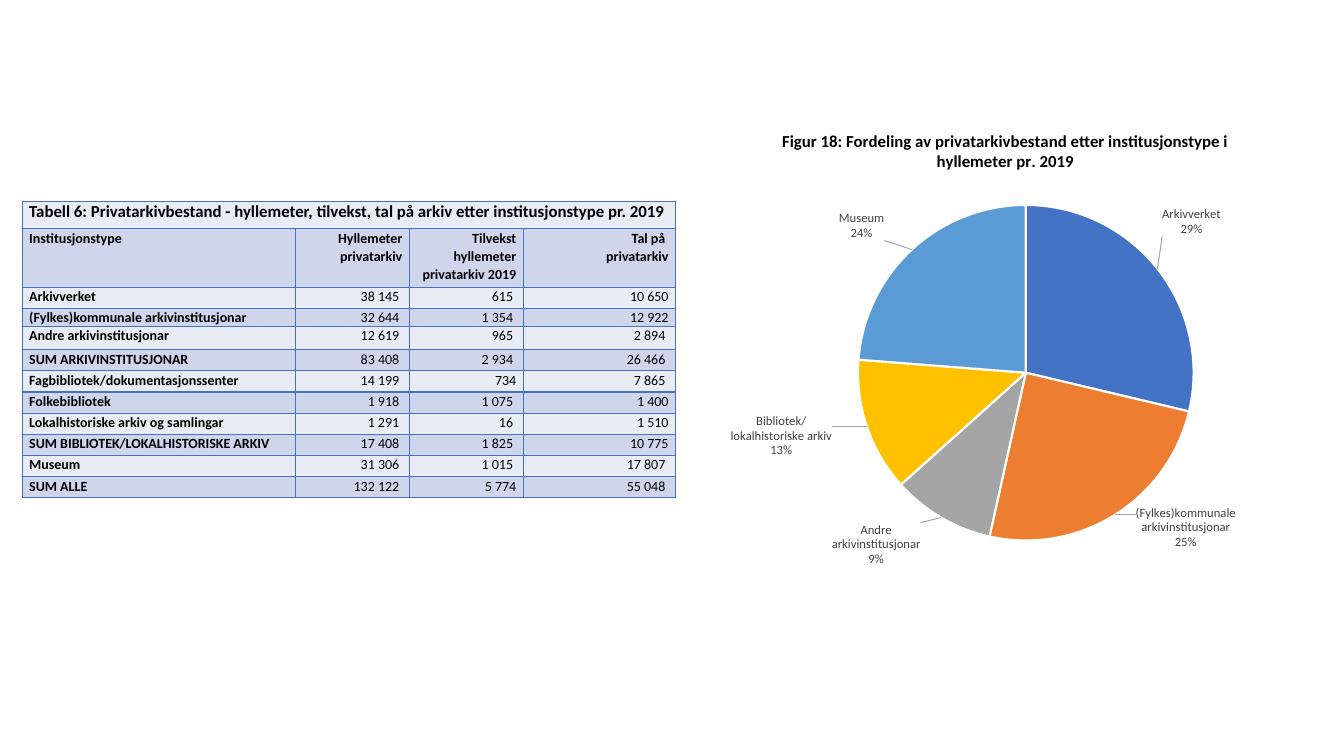
from dataclasses import dataclass

from pptx import Presentation
from pptx.chart.data import CategoryChartData
from pptx.dml.color import RGBColor
from pptx.enum.chart import XL_CHART_TYPE
from pptx.enum.text import PP_ALIGN
from pptx.oxml import parse_xml
from pptx.util import Inches, Pt

PIE = XL_CHART_TYPE.PIE
LEFT = PP_ALIGN.LEFT
RIGHT = PP_ALIGN.RIGHT
NS = (
    'xmlns:c="http://schemas.openxmlformats.org/drawingml/2006/chart" '
    'xmlns:a="http://schemas.openxmlformats.org/drawingml/2006/main"'
)


@dataclass(frozen=True)
class Theme:
    font: str = "Calibri"
    ink: str = "000000"
    label: str = "404040"
    leader: str = "A6A6A6"
    white: str = "FFFFFF"
    line: str = "4472C4"
    bands: tuple = ("E9EBF5", "CFD5EA")
    slices: tuple = ("4472C4", "ED7D31", "A5A5A5", "FFC000", "5B9BD5")
    title: int = 12
    body: int = 10
    small: int = 9


HEAD = [
    "Institusjonstype",
    "Hyllemeter privatarkiv",
    "Tilvekst hyllemeter privatarkiv 2019",
    "Tal på \nprivatarkiv",
]
ROWS = [
    ["Arkivverket", "38 145 ", "615 ", "10 650"],
    ["(Fylkes)kommunale arkivinstitusjonar", "32 644 ", "1 354 ", "12 922"],
    ["Andre arkivinstitusjonar", "12 619 ", "965 ", "2 894 "],
    ["SUM ARKIVINSTITUSJONAR", "83 408 ", "2 934 ", "26 466 "],
    ["Fagbibliotek/dokumentasjonssenter", "14 199 ", "734", "7 865 "],
    ["Folkebibliotek", "1 918 ", "1 075 ", "1 400"],
    ["Lokalhistoriske arkiv og samlingar", "1 291 ", "16 ", "1 510"],
    ["SUM BIBLIOTEK/LOKALHISTORISKE ARKIV", "17 408 ", "1 825 ", "10 775"],
    ["Museum", "31 306 ", "1 015 ", "17 807 "],
    ["SUM ALLE", "132 122 ", "5 774", "55 048 "],
]
WIDTHS = [2.71, 1.13, 1.13, 1.51]
HEIGHTS = [0.27, 0.58, 0.21, 0.18, 0.23] + [0.21] * 7
SHARES = {
    "Arkivverket": 29,
    "(Fylkes)kommunale arkivinstitusjonar": 25,
    "Andre arkivinstitusjonar": 10,
    "Bibliotek/lokalhistoriske arkiv": 13,
    "Museum": 24,
}
SHIFTS = [(0, -0.06), (0.03, -0.03), (-0.03, 0), (-0.05, -0.03), (-0.04, -0.01)]
FIXED = {2: ["Andre arkivinstitusjonar", "9%"]}


def apply(target, values):
    for name, value in values.items():
        setattr(target, name, value)


class Page:
    def __init__(self, slide, theme):
        self.slide = slide
        self.theme = theme

    def style(self, font, size, bold=False, color=None):
        apply(font, {"name": self.theme.font, "size": Pt(size), "bold": bold})
        font.color.rgb = RGBColor.from_string(color or self.theme.ink)

    def border(self, cell):
        props = cell._tc.get_or_add_tcPr()
        for place, side in enumerate("LRTB"):
            props.insert(place, parse_xml(
                f'<a:ln{side} {NS} w="12700"><a:solidFill>'
                f'<a:srgbClr val="{self.theme.line}"/></a:solidFill></a:ln{side}>'
            ))

    def cell(self, cell, text, band, size, bold, align, space):
        apply(cell, {
            "text": text,
            "margin_left": Inches(0.07), "margin_right": Inches(0.07),
            "margin_top": 0, "margin_bottom": 0,
        })
        cell.fill.solid()
        cell.fill.fore_color.rgb = RGBColor.from_string(self.theme.bands[band])
        self.border(cell)
        for para in cell.text_frame.paragraphs:
            apply(para, {"alignment": align, "line_spacing": space})
            self.style(para.font, size, bold)
            for run in para.runs:
                self.style(run.font, size, bold)

    def table(self, box, title, rows, widths, heights):
        grid = self.slide.shapes.add_table(
            len(heights), len(widths), *map(Inches, box)
        ).table
        apply(grid, {"first_row": False, "horz_banding": False})
        for col, width in zip(grid.columns, widths):
            col.width = Inches(width)
        for row, height in zip(grid.rows, heights):
            row.height = Inches(height)
        for c in range(len(widths)):
            self.cell(grid.cell(0, c), "" if c else title, 0,
                      self.theme.title, True, LEFT, 1.0)
        grid.cell(0, 0).merge(grid.cell(0, len(widths) - 1))
        for r, row in enumerate(rows, 1):
            for c, text in enumerate(row):
                self.cell(grid.cell(r, c), text, r % 2, self.theme.body,
                          r == 1 or c == 0, RIGHT if c else LEFT, 1.07)

    def labels(self, shifts, fixed):
        theme = self.theme
        props = (
            f'sz="{theme.small * 100}" b="0"><a:solidFill><a:srgbClr '
            f'val="{theme.label}"/></a:solidFill><a:latin typeface="{theme.font}"/>'
        )
        shows = (
            '<c:dLblPos val="outEnd"/><c:showLegendKey val="0"/><c:showVal val="0"/>'
            '<c:showCatName val="1"/><c:showSerName val="0"/><c:showPercent val="1"/>'
            '<c:showBubbleSize val="0"/><c:separator>\n</c:separator>'
        )
        look = (
            '<c:numFmt formatCode="0%" sourceLinked="0"/><c:spPr><a:noFill/></c:spPr>'
            f'<c:txPr><a:bodyPr/><a:p><a:pPr><a:defRPr {props}</a:defRPr>'
            '</a:pPr></a:p></c:txPr>'
        )
        items = ""
        for i, (x, y) in enumerate(shifts):
            lines = "".join(
                f"<a:p><a:r><a:rPr {props}</a:rPr><a:t>{line}</a:t></a:r></a:p>"
                for line in fixed.get(i, [])
            )
            rich = f"<c:tx><c:rich><a:bodyPr/>{lines}</c:rich></c:tx>" if lines else ""
            items += (
                f'<c:dLbl><c:idx val="{i}"/><c:layout><c:manualLayout>'
                f'<c:x val="{x}"/><c:y val="{y}"/></c:manualLayout></c:layout>'
                f"{rich}{look}{shows}</c:dLbl>"
            )
        return parse_xml(
            f'<c:dLbls {NS}>{items}{look}{shows}<c:showLeaderLines val="1"/>'
            '<c:leaderLines><c:spPr><a:ln w="9525"><a:solidFill>'
            f'<a:srgbClr val="{theme.leader}"/></a:solidFill></a:ln></c:spPr>'
            "</c:leaderLines></c:dLbls>"
        )

    def pie(self, box, title, shares, plot, shifts, fixed):
        data = CategoryChartData()
        data.categories = list(shares)
        data.add_series("Series 1", list(shares.values()))
        chart = self.slide.shapes.add_chart(PIE, *map(Inches, box), data).chart
        apply(chart, {"has_legend": False, "has_title": True})
        self.style(chart.font, self.theme.body)
        frame = chart.chart_title.text_frame
        frame.text = title
        self.style(frame.paragraphs[0].runs[0].font, self.theme.title, True)
        chart.plots[0].vary_by_categories = True
        series = chart.plots[0].series[0]
        for i, color in enumerate(self.theme.slices):
            form = series.points[i].format
            form.fill.solid()
            form.fill.fore_color.rgb = RGBColor.from_string(color)
            form.line.color.rgb = RGBColor.from_string(self.theme.white)
            form.line.width = Pt(1.5)
        series._element.find("{*}cat").addprevious(self.labels(shifts, fixed))
        area = chart._chartSpace.chart.plotArea
        for old in area.findall("{*}layout"):
            area.remove(old)
        sides = "".join(f'<c:{k} val="{v}"/>' for k, v in plot.items())
        area.insert(0, parse_xml(
            f'<c:layout {NS}><c:manualLayout><c:layoutTarget val="inner"/>'
            '<c:xMode val="edge"/><c:yMode val="edge"/>'
            f"{sides}</c:manualLayout></c:layout>"
        ))


def main():
    deck = Presentation()
    apply(deck, {"slide_width": Inches(13.33), "slide_height": Inches(7.5)})
    page = Page(deck.slides.add_slide(deck.slide_layouts[6]), Theme())
    page.pie(
        (7.05, 1.11, 5.84, 4.75),
        "Figur 18: Fordeling av privatarkivbestand etter institusjonstype i "
        "hyllemeter pr. 2019",
        SHARES, {"x": 0.25, "y": 0.19, "w": 0.57, "h": 0.71}, SHIFTS, FIXED,
    )
    page.table(
        (0.22, 2, 6.49, 2.93),
        "Tabell 6: Privatarkivbestand - hyllemeter, tilvekst, tal på arkiv "
        "etter institusjonstype pr. 2019",
        [HEAD] + ROWS, WIDTHS, HEIGHTS,
    )
    deck.save("out.pptx")


if __name__ == "__main__":
    main()
